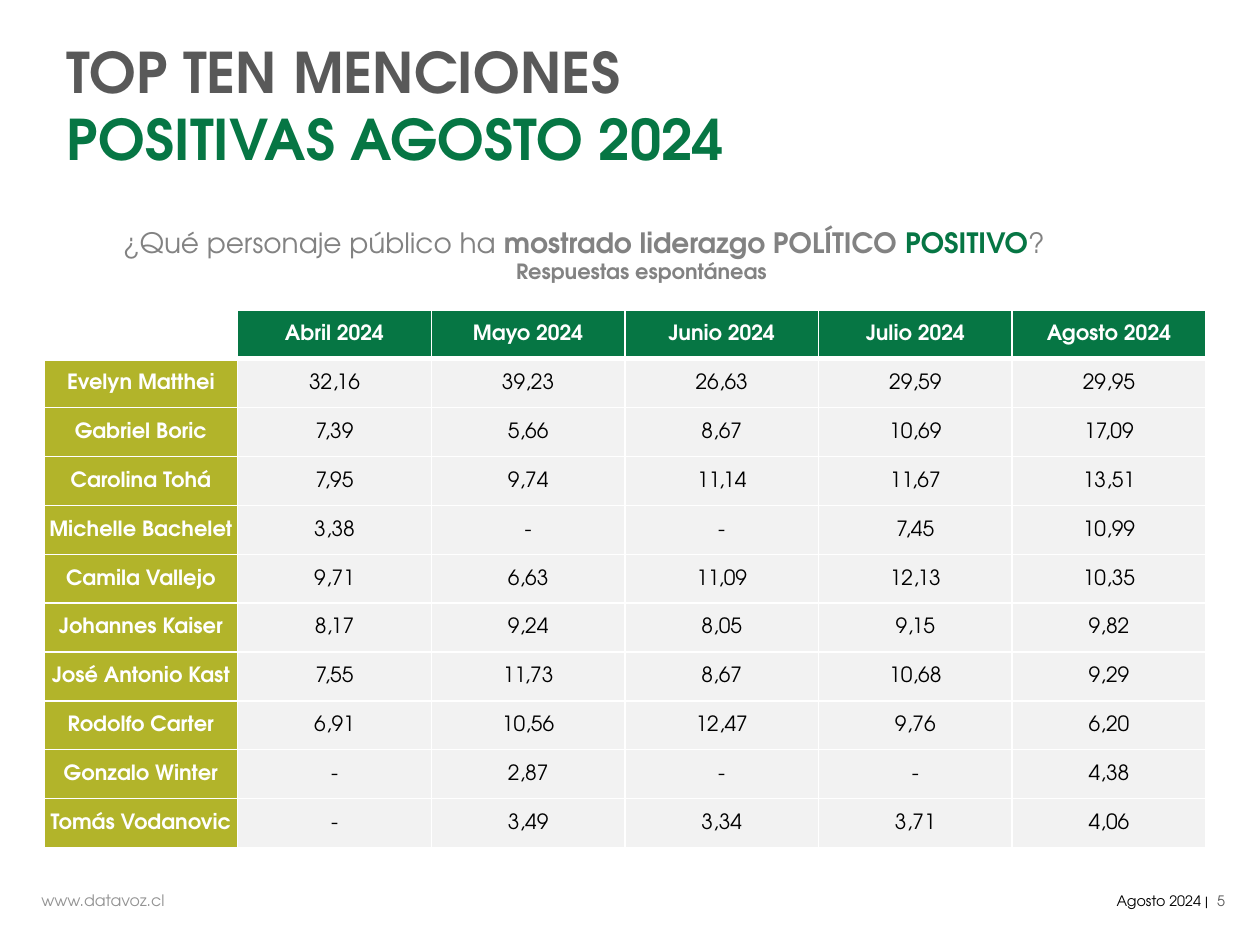
from lxml import etree
from pptx import Presentation
from pptx.dml.color import RGBColor
from pptx.enum.text import MSO_ANCHOR, MSO_AUTO_SIZE, PP_ALIGN
from pptx.oxml.ns import qn
from pptx.util import Inches, Pt

FONT = "TeX Gyre Adventor"
GREEN = RGBColor(0x06, 0x76, 0x44)
OLIVE = RGBColor(0xB2, 0xB4, 0x2A)
PALE = RGBColor(0xF2, 0xF2, 0xF2)
WHITE = RGBColor(0xFF, 0xFF, 0xFF)
BLACK = RGBColor(0x00, 0x00, 0x00)
DARK_GREY = RGBColor(0x59, 0x59, 0x59)
MID_GREY = RGBColor(0x82, 0x82, 0x82)
LIGHT_GREY = RGBColor(0x93, 0x93, 0x93)

MONTHS = ["Abril 2024", "Mayo 2024", "Junio 2024", "Julio 2024", "Agosto 2024"]
MENTIONS = [
    ("Evelyn Matthei", "32,16", "39,23", "26,63", "29,59", "29,95"),
    ("Gabriel Boric", "7,39", "5,66", "8,67", "10,69", "17,09"),
    ("Carolina Tohá", "7,95", "9,74", "11,14", "11,67", "13,51"),
    ("Michelle Bachelet", "3,38", "-", "-", "7,45", "10,99"),
    ("Camila Vallejo", "9,71", "6,63", "11,09", "12,13", "10,35"),
    ("Johannes Kaiser", "8,17", "9,24", "8,05", "9,15", "9,82"),
    ("José Antonio Kast", "7,55", "11,73", "8,67", "10,68", "9,29"),
    ("Rodolfo Carter", "6,91", "10,56", "12,47", "9,76", "6,20"),
    ("Gonzalo Winter", "-", "2,87", "-", "-", "4,38"),
    ("Tomás Vodanovic", "-", "3,49", "3,34", "3,71", "4,06"),
]


def add_run(p, text, size=12, color=BLACK, bold=False):
    r = p.add_run()
    r.text = text
    r.font.name = FONT
    r.font.size = Pt(size)
    r.font.bold = bold
    r.font.color.rgb = color
    return r


def set_borders(cell, **widths):
    """Draw white cell borders; widths in points by side: L, R, T, B."""
    tcPr = cell._tc.get_or_add_tcPr()
    for side in "LRTB":
        ln = etree.SubElement(tcPr, qn(f"a:ln{side}"), w=str(Pt(widths.get(side, 1))))
        fill = etree.SubElement(ln, qn("a:solidFill"))
        etree.SubElement(fill, qn("a:srgbClr"), val=str(WHITE))


class SlideBuilder:
    def __init__(self, prs):
        self.s = prs.slides.add_slide(prs.slide_layouts[5])

    def title(self, x, y, w, h, runs):
        sp = self.s.shapes.title
        sp.left, sp.top, sp.width, sp.height = map(Inches, (x, y, w, h))
        tf = sp.text_frame
        tf.word_wrap = True
        tf.auto_size = MSO_AUTO_SIZE.NONE
        tf.vertical_anchor = MSO_ANCHOR.MIDDLE
        p = tf.paragraphs[0]
        p.alignment = PP_ALIGN.LEFT
        pPr = p._p.get_or_add_pPr()
        pPr.set("marL", str(Inches(0.15)))
        pPr.set("indent", "0")
        for text, color in runs:
            add_run(p, text, size=32, color=color, bold=True)

    def text(self, x, y, w, h, *paragraphs, wrap=True, anchor=MSO_ANCHOR.TOP,
             auto_size=MSO_AUTO_SIZE.SHAPE_TO_FIT_TEXT):
        """Each paragraph is (alignment, [(text, run format), ...])."""
        tf = self.s.shapes.add_textbox(*map(Inches, (x, y, w, h))).text_frame
        tf.word_wrap = wrap
        tf.auto_size = auto_size
        tf.vertical_anchor = anchor
        for i, (align, runs) in enumerate(paragraphs):
            p = tf.add_paragraph() if i else tf.paragraphs[0]
            p.alignment = align
            for text, style in runs:
                add_run(p, text, **style)

    def table(self, x, y, w, h, rows):
        table = self.s.shapes.add_table(
            len(rows), len(rows[0]), *map(Inches, (x, y, w, h))).table
        table.horz_banding = False
        for i, row in enumerate(rows):
            for j, text in enumerate(row):
                self.cell(table.cell(i, j), text, i, j)

    def cell(self, cell, text, i, j):
        cell.vertical_anchor = MSO_ANCHOR.MIDDLE
        cell.margin_left = cell.margin_right = cell.margin_top = Inches(0.01)
        cell.margin_bottom = 0
        set_borders(cell, T=3 if i == 1 else 1, B=3 if i == 0 else 1)
        if not text:
            cell.fill.background()
            return
        heading = i == 0 or j == 0
        cell.fill.solid()
        cell.fill.fore_color.rgb = GREEN if i == 0 else OLIVE if j == 0 else PALE
        p = cell.text_frame.paragraphs[0]
        p.alignment = PP_ALIGN.CENTER
        add_run(p, text, color=WHITE if heading else BLACK, bold=heading)


def main():
    prs = Presentation()
    prs.slide_width, prs.slide_height = Inches(10), Inches(7.5)
    b = SlideBuilder(prs)
    b.title(0.28, 0.43, 6.61, 0.8, [("TOP TEN MENCIONES ", DARK_GREY),
                                    ("POSITIVAS AGOSTO 2024", GREEN)])
    question = dict(size=16, color=MID_GREY)
    b.text(0.88, 1.74, 8.47, 0.57,
           (PP_ALIGN.LEFT, [
               ("¿Qué personaje público ha ", question),
               ("mostrado liderazgo POLÍTICO ", dict(question, bold=True)),
               ("POSITIVO", dict(size=16, color=GREEN, bold=True)),
               ("?", question)]),
           (PP_ALIGN.CENTER, [
               ("Respuestas espontáneas ", dict(color=MID_GREY, bold=True))]))
    b.table(0.35, 2.46, 9.22, 4.27, [("", *MONTHS), *MENTIONS])
    b.text(0.23, 7.02, 2.16, 0.25,
           (PP_ALIGN.LEFT, [("www.datavoz.cl", dict(size=9, color=LIGHT_GREY))]))
    b.text(8.69, 7.03, 1.03, 0.24,
           (PP_ALIGN.RIGHT, [("Agosto 2024 | ", dict(size=8.2))]), wrap=False)
    b.text(8.97, 6.95, 0.85, 0.4,
           (PP_ALIGN.RIGHT, [("5", dict(size=8.2, color=DARK_GREY))]),
           anchor=MSO_ANCHOR.MIDDLE, auto_size=MSO_AUTO_SIZE.NONE)
    prs.save("out.pptx")


if __name__ == "__main__":
    main()
